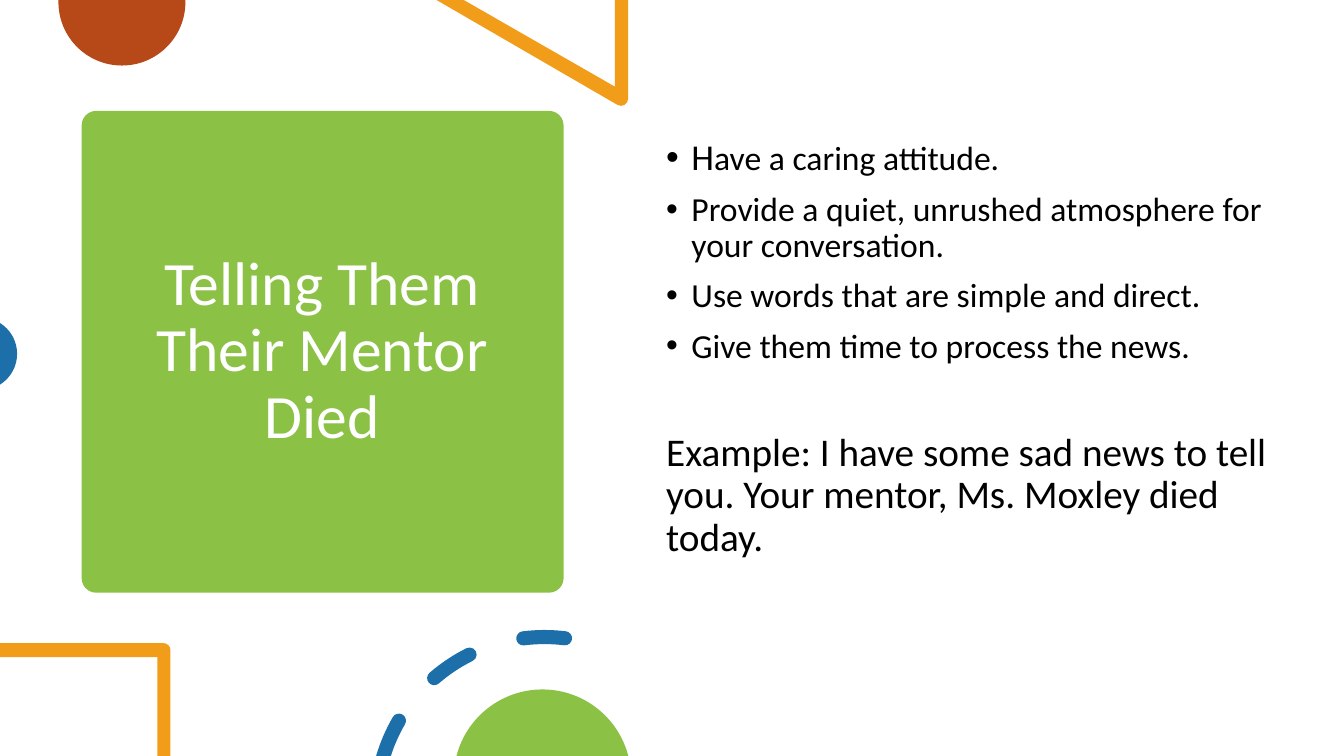
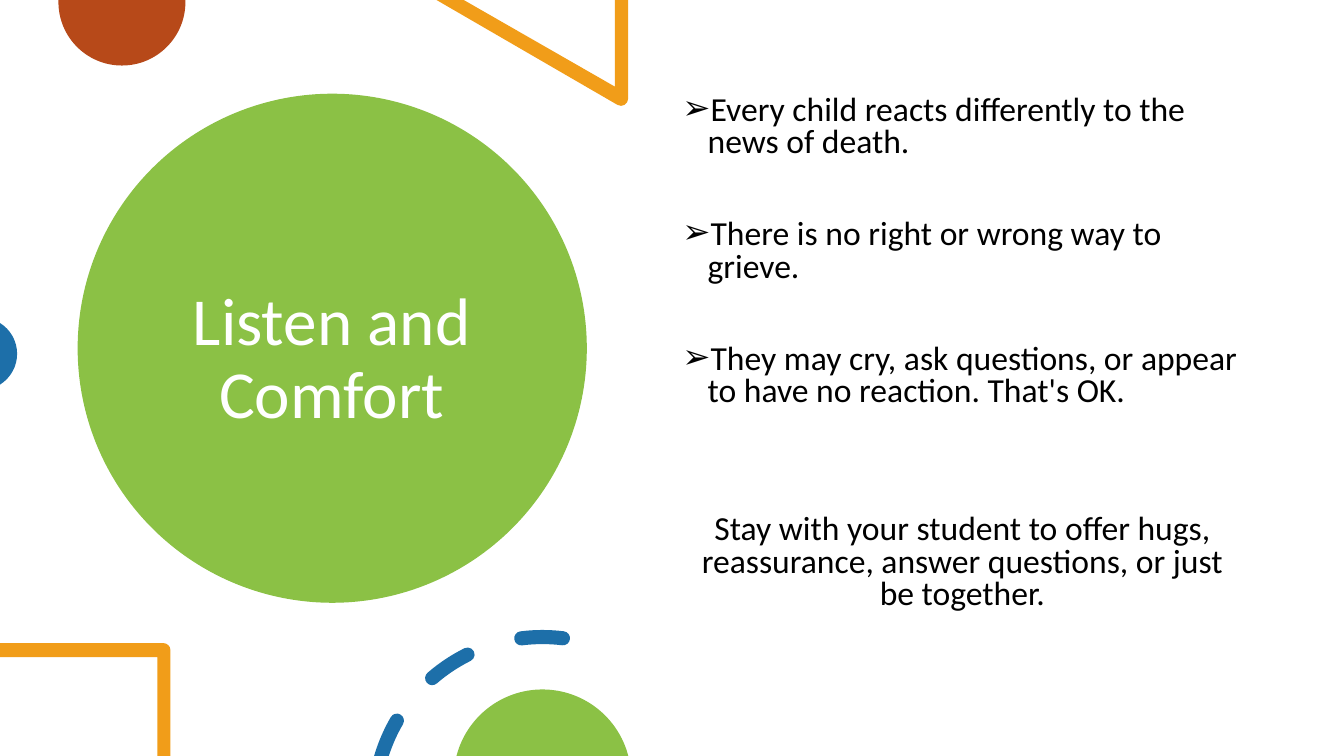
from math import ceil, cos, dist, radians, sin, tan

from lxml import etree
from pptx import Presentation
from pptx.dml.color import RGBColor
from pptx.enum.shapes import MSO_SHAPE
from pptx.enum.text import MSO_ANCHOR, PP_ALIGN
from pptx.oxml.ns import qn
from pptx.util import Inches, Pt

ROUNDED = MSO_SHAPE.ROUNDED_RECTANGLE
OVAL = MSO_SHAPE.OVAL
MIDDLE = MSO_ANCHOR.MIDDLE
TOP = MSO_ANCHOR.TOP
CENTER = PP_ALIGN.CENTER
LEFT = PP_ALIGN.LEFT

FONT = "Calibri"
GREEN, ORANGE, BLUE, RUST = "8BC145", "F19D19", "1D6FA9", "B74919"
BLACK, WHITE = "000000", "FFFFFF"
RING_Y = 7.99
RING_RADIUS = 1.67
DASH_HALF = 0.07
HANG = 0.25


def color(hex_value):
    return RGBColor.from_string(hex_value)


def paint(shape, fill):
    shape.shadow.inherit = False
    shape.fill.solid()
    shape.fill.fore_color.rgb = color(fill)
    shape.line.fill.background()


def lines(*points):
    return [(point,) for point in points]


def on_circle(cx, cy, radius, degrees):
    angle = radians(degrees)
    return cx + radius * cos(angle), cy + radius * sin(angle)


def arc(cx, cy, radius, start, end):
    """A line to the arc's start, then cubic curves; degrees run clockwise."""
    count = ceil(abs(end - start) / 90)
    step = (end - start) / count
    handle = radius * 4 / 3 * tan(radians(step) / 4)
    segments = lines(on_circle(cx, cy, radius, start))
    for index in range(count):
        a, b = start + index * step, start + (index + 1) * step
        ax, ay = on_circle(cx, cy, radius, a)
        bx, by = on_circle(cx, cy, radius, b)
        leave = on_circle(ax, ay, handle, a + 90)
        arrive = on_circle(bx, by, handle, b - 90)
        segments.append((leave, arrive, (bx, by)))
    return segments


def without_repeats(contour):
    """Drop lines that lead to the point already reached."""
    kept = contour[:1]
    for segment in contour[1:]:
        if len(segment) == 3 or dist(segment[0], kept[-1][-1]) > 0.001:
            kept.append(segment)
    return kept


def add_outline(slide, fill, *contours):
    """Add one filled freeform made of closed contours in inches."""
    contours = [without_repeats(contour) for contour in contours]
    builder = None
    for contour in contours:
        first, *rest = [(Inches(x), Inches(y)) for segment in contour for x, y in segment]
        if builder is None:
            builder = slide.shapes.build_freeform(*first, scale=1.0)
        else:
            builder.move_to(*first)
        builder.add_line_segments(rest, close=True)
    outline = builder.convert_to_shape()
    bend(outline, [segment for contour in contours for segment in contour[1:]])
    paint(outline, fill)


def bend(outline, segments):
    """Join the three lines of each curved segment into one cubic curve."""
    steps = iter(list(outline._element.iter(qn("a:lnTo"))))
    for segment in segments:
        group = [next(steps) for _ in segment]
        if len(group) == 3:
            curve = etree.Element(qn("a:cubicBezTo"))
            group[0].addprevious(curve)
            for line in group:
                curve.append(line[0])
                line.getparent().remove(line)


def dash(cx, start, end):
    """A thick arc with round ends."""
    return cut_dash(cx, start, start, end) + arc(
        *on_circle(cx, RING_Y, RING_RADIUS, start), DASH_HALF, start + 180, start + 360)


def cut_dash(cx, outer_start, inner_start, end):
    """A thick arc with a flat start and a round end."""
    return (arc(cx, RING_Y, RING_RADIUS + DASH_HALF, outer_start, end)
            + arc(*on_circle(cx, RING_Y, RING_RADIUS, end), DASH_HALF, end, end + 180)
            + arc(cx, RING_Y, RING_RADIUS - DASH_HALF, end, inner_start))


def add_top_decor(slide):
    add_outline(slide, RUST,
                lines((1.84, 0)) + arc(1.21, 0.02, 0.63, 0, 180) + lines((0.58, 0)))
    add_outline(slide, ORANGE,
                lines((6.23, 0), (6.1, 0), (6.1, 0.86), (4.6, 0), (4.33, 0))
                + arc(6.16, 0.98, 0.07, 120, 0))
    add_outline(slide, BLUE, arc(-0.19, 3.51, 0.36, -58, 58))


def add_bottom_decor(slide, ring_x):
    add_outline(slide, ORANGE,
                lines((0, 6.38)) + arc(1.62, 6.45, 0.07, -90, 0)
                + lines((1.69, 7.5), (1.56, 7.5), (1.56, 6.52), (0, 6.52)))
    add_outline(slide, BLUE,
                cut_dash(ring_x, 196.4, 197.9, 210.2),
                dash(ring_x, 229.1, 243.6),
                dash(ring_x, 262.8, 277))
    add_outline(slide, GREEN, arc(5.38, 7.72, 0.88, 194.5, 345.5))


def add_panel(slide, preset, left, top, size):
    panel = slide.shapes.add_shape(
        preset, Inches(left), Inches(top), Inches(size), Inches(size))
    paint(panel, GREEN)
    return panel


def add_text_frame(slide, box, anchor):
    frame = slide.shapes.add_textbox(*map(Inches, box)).text_frame
    frame.word_wrap = True
    frame.vertical_anchor = anchor
    return frame


def set_bullet(paragraph, mark):
    properties = paragraph._p.get_or_add_pPr()
    properties.set("marL", str(Inches(HANG)))
    properties.set("indent", str(-Inches(HANG)))
    etree.SubElement(properties, qn("a:buFont")).set("typeface", "Arial")
    etree.SubElement(properties, qn("a:buChar")).set("char", mark)


def style(paragraph, size, ink, spacing, align=LEFT, before=0, mark=None):
    paragraph.alignment = align
    paragraph.line_spacing = spacing
    paragraph.space_before = Pt(before)
    if mark:
        set_bullet(paragraph, mark)
    paragraph.font.name = FONT
    paragraph.font.size = Pt(size)
    paragraph.font.color.rgb = color(ink)


def add_title(slide, box, text, size):
    title = add_text_frame(slide, box, MIDDLE).paragraphs[0]
    title.text = text
    style(title, size, WHITE, 0.9, CENTER)


def add_body(slide, box, bullets, mark, gap, spacing, closing, closing_size,
             closing_gap, closing_align):
    """Add bullets set apart by gap points, then an unmarked closing line."""
    frame = add_text_frame(slide, box, TOP)
    for index, text in enumerate(bullets):
        item = frame.add_paragraph() if index else frame.paragraphs[0]
        item.text = text
        style(item, 24, BLACK, spacing, before=gap if index else 10, mark=mark)
    last = frame.add_paragraph()
    last.text = closing
    style(last, closing_size, BLACK, spacing, closing_align, closing_gap)
    return frame


def enlarge_initial(paragraph, size):
    initial = paragraph.runs[0]
    remainder = initial.text[1:]
    initial.text = initial.text[0]
    initial.font.size = Pt(size)
    paragraph.add_run().text = remainder


def build_telling_slide(slide):
    panel = add_panel(slide, ROUNDED, 0.81, 1.1, 4.78)
    panel.adjustments[0] = 0.03
    add_title(slide, (1.04, 1.21, 4.31, 4.56), "Telling Them Their Mentor Died", 44)
    add_top_decor(slide)
    body = add_body(
        slide, (6.51, 1.33, 6.34, 6.05),
        ["Have a caring attitude.",
         "Provide a quiet, unrushed atmosphere for your conversation.",
         "Use words that are simple and direct.",
         "Give them time to process the news."],
        "•", 10, 0.9,
        "Example: I have some sad news to tell you. Your mentor, Ms. Moxley died today.",
        28, 48, LEFT)
    enlarge_initial(body.paragraphs[0], 26)
    add_bottom_decor(slide, 5.4)


def build_comfort_slide(slide):
    add_panel(slide, OVAL, 0.77, 0.93, 5.05)
    add_title(slide, (1.52, 1.35, 3.54, 4.45), "Listen and Comfort", 48)
    add_top_decor(slide)
    add_body(
        slide, (6.67, 0.9, 5.75, 5.35),
        ["Every child reacts differently to the news of death.",
         "There is no right or wrong way to grieve.",
         "They may cry, ask questions, or appear to have no reaction. That's OK."],
        "➢", 42.8, 0.8,
        "Stay with your student to offer hugs, reassurance, answer questions, "
        "or just be together.",
        24, 75.6, CENTER)
    add_bottom_decor(slide, 5.38)


def main():
    deck = Presentation()
    deck.slide_width = Inches(13.33)
    deck.slide_height = Inches(7.5)
    blank = deck.slide_layouts[6]
    for build in (build_telling_slide, build_comfort_slide):
        build(deck.slides.add_slide(blank))
    deck.save("out.pptx")


if __name__ == "__main__":
    main()
